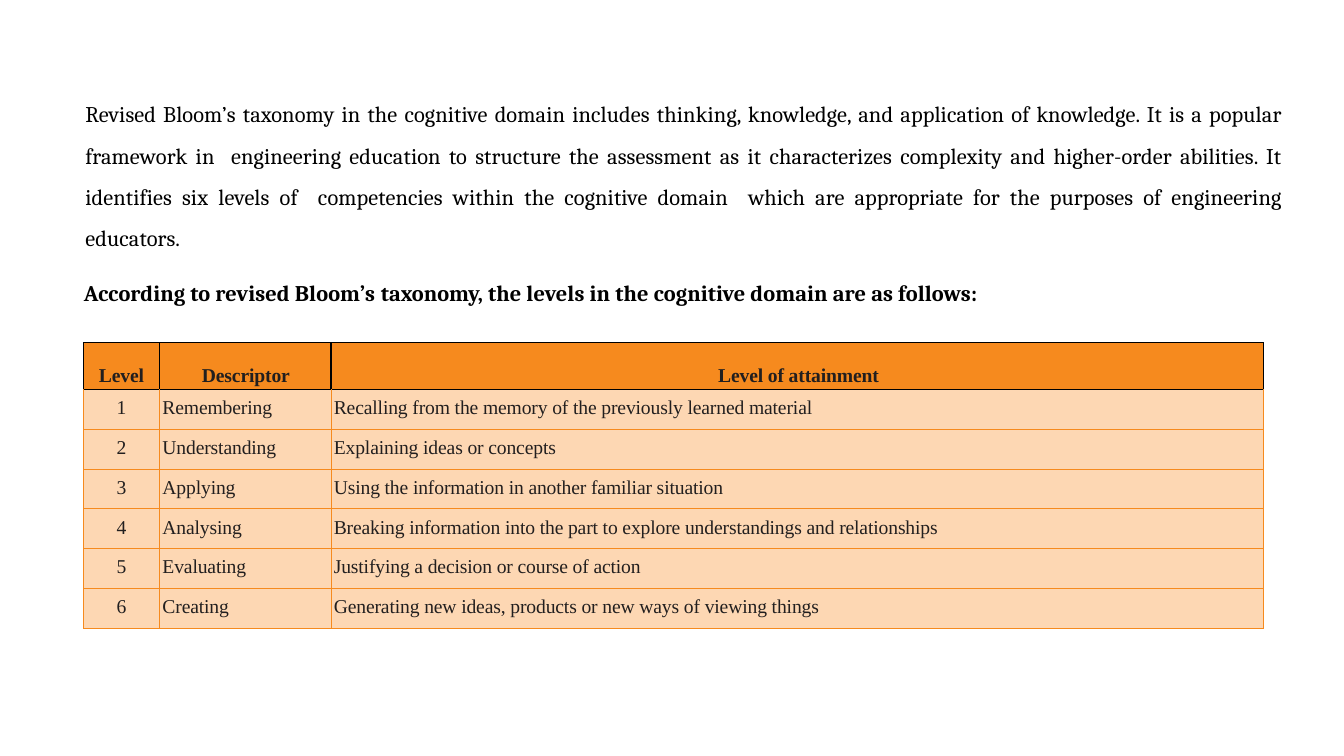
from dataclasses import dataclass, field

from lxml.etree import SubElement
from pptx import Presentation
from pptx.dml.color import RGBColor
from pptx.enum.text import MSO_ANCHOR, MSO_AUTO_SIZE, PP_ALIGN
from pptx.oxml.ns import qn
from pptx.util import Pt

HUES = {
    "text": "000000",
    "ink": "221F1F",
    "head": "F68A1E",
    "body": "FDD7B3",
    "rule": "F68A1E",
    "edge": "000000",
}
SERIF = {"name": "Cambria", "size": Pt(16), "bold": False}
TIMES = {"name": "Times New Roman", "size": Pt(14), "bold": False}
BOLD = {"bold": True}


@dataclass
class Run:
    text: str
    font: dict
    hue: str
    track: float = 0


@dataclass
class Para:
    runs: list[Run]
    align: PP_ALIGN = PP_ALIGN.LEFT
    left: float = 0
    form: dict = field(default_factory=dict)


@dataclass
class Edge:
    hue: str
    width: float


@dataclass
class Box:
    para: Para
    fill: str
    top: float
    edges: dict[str, Edge]


def apply(item, form: dict) -> None:
    for key, value in form.items():
        setattr(item, key, value)


def color(name: str) -> RGBColor:
    return RGBColor.from_string(HUES[name])


def write(par, data: Para) -> None:
    par.alignment = data.align
    par._p.get_or_add_pPr().set("marL", str(Pt(data.left)))
    apply(par, data.form)
    for part in data.runs:
        run = par.add_run()
        run.text = part.text
        apply(run.font, part.font)
        run.font.color.rgb = color(part.hue)
        run._r.get_or_add_rPr().set("spc", str(round(part.track * 100)))


def border(cell, side: str, edge: Edge) -> None:
    line = SubElement(cell._tc.get_or_add_tcPr(), qn(f"a:ln{side}"),
                      w=str(Pt(edge.width)))
    fill = SubElement(line, qn("a:solidFill"))
    SubElement(fill, qn("a:srgbClr"), val=HUES[edge.hue])


def draw(cell, box: Box) -> None:
    apply(cell, {
        "margin_left": 0, "margin_right": 0, "margin_bottom": 0,
        "margin_top": Pt(box.top), "vertical_anchor": MSO_ANCHOR.TOP,
    })
    for side, edge in box.edges.items():
        border(cell, side, edge)
    cell.fill.solid()
    cell.fill.fore_color.rgb = color(box.fill)
    write(cell.text_frame.paragraphs[0], box.para)


# Wording
INTRO = (
    "Revised Bloom’s taxonomy in the cognitive domain includes thinking, "
    "knowledge, and application of knowledge. It is a popular framework in  "
    "engineering education to structure the assessment as it characterizes "
    "complexity and higher-order abilities. It identifies six levels of  "
    "competencies within the cognitive domain  which are appropriate for the "
    "purposes of engineering educators."
)
LEAD = [
    ("According to revised Bloom’s ", 0.1),
    ("taxonomy, ", 0),
    ("the levels in the cognitive domain are as follows:", 0.1),
]
HEADS = [
    ("Level", PP_ALIGN.CENTER, 0),
    ("Descriptor", PP_ALIGN.LEFT, 30.2),
    ("Level of attainment", PP_ALIGN.CENTER, 2),
]
LEVELS = [
    ("Remembering",
     "Recalling from the memory of the previously learned material"),
    ("Understanding", "Explaining ideas or concepts"),
    ("Applying", "Using the information in another familiar situation"),
    ("Analysing", "Breaking information into the part to explore "
     "understandings and relationships"),
    ("Evaluating", "Justifying a decision or course of action"),
    ("Creating",
     "Generating new ideas, products or new ways of viewing things"),
]
COLS = [54.4, 122.4, 666]
TALL, ROW = 33.6, 28.4

# Slide
deck = Presentation()
apply(deck, {"slide_width": Pt(960), "slide_height": Pt(540)})
slide = deck.slides.add_slide(deck.slide_layouts[6])

# Introduction
frame = slide.shapes.add_textbox(Pt(59), Pt(60.5), Pt(859), Pt(159)).text_frame
apply(frame, {
    "word_wrap": True, "auto_size": MSO_AUTO_SIZE.SHAPE_TO_FIT_TEXT,
    "margin_left": 0, "margin_right": 0, "margin_bottom": 0,
    "margin_top": Pt(0.9),
})
write(frame.paragraphs[0], Para([Run(INTRO, SERIF, "text", 0.1)],
                                PP_ALIGN.JUSTIFY, 2, {"line_spacing": 1.54}))
write(frame.add_paragraph(), Para(
    [Run(text, SERIF | BOLD, "text", track) for text, track in LEAD],
    PP_ALIGN.JUSTIFY, 1, {"space_before": Pt(19.5)}))

# Table of levels
table = slide.shapes.add_table(
    len(LEVELS) + 1, len(COLS), Pt(59.6), Pt(244.8),
    Pt(sum(COLS)), Pt(TALL + ROW * len(LEVELS))).table
apply(table, {"first_row": False, "horz_banding": False})
for col, width in zip(table.columns, COLS):
    col.width = Pt(width)
for i, row in enumerate(table.rows):
    row.height = Pt(ROW if i else TALL)

# Header row
dark, warm = Edge("edge", 1), Edge("rule", 0.75)
for j, (text, align, left) in enumerate(HEADS):
    para = Para([Run(text, TIMES | BOLD, "ink", -0.1)], align, left)
    draw(table.cell(0, j), Box(para, "head", 16.2, dict.fromkeys("LRTB", dark)))

# Level rows
for i, words in enumerate(LEVELS, 1):
    edges = dict.fromkeys("LRTB", warm)
    if i == 1:
        edges["T"] = dark
    paras = [Para([Run(str(i), TIMES, "ink")], PP_ALIGN.CENTER)]
    paras += [Para([Run(text, TIMES, "ink", -0.1)], left=2) for text in words]
    for j, para in enumerate(paras):
        draw(table.cell(i, j), Box(para, "body", 5.4 if i == 1 else 5.6, edges))

deck.save("out.pptx")
